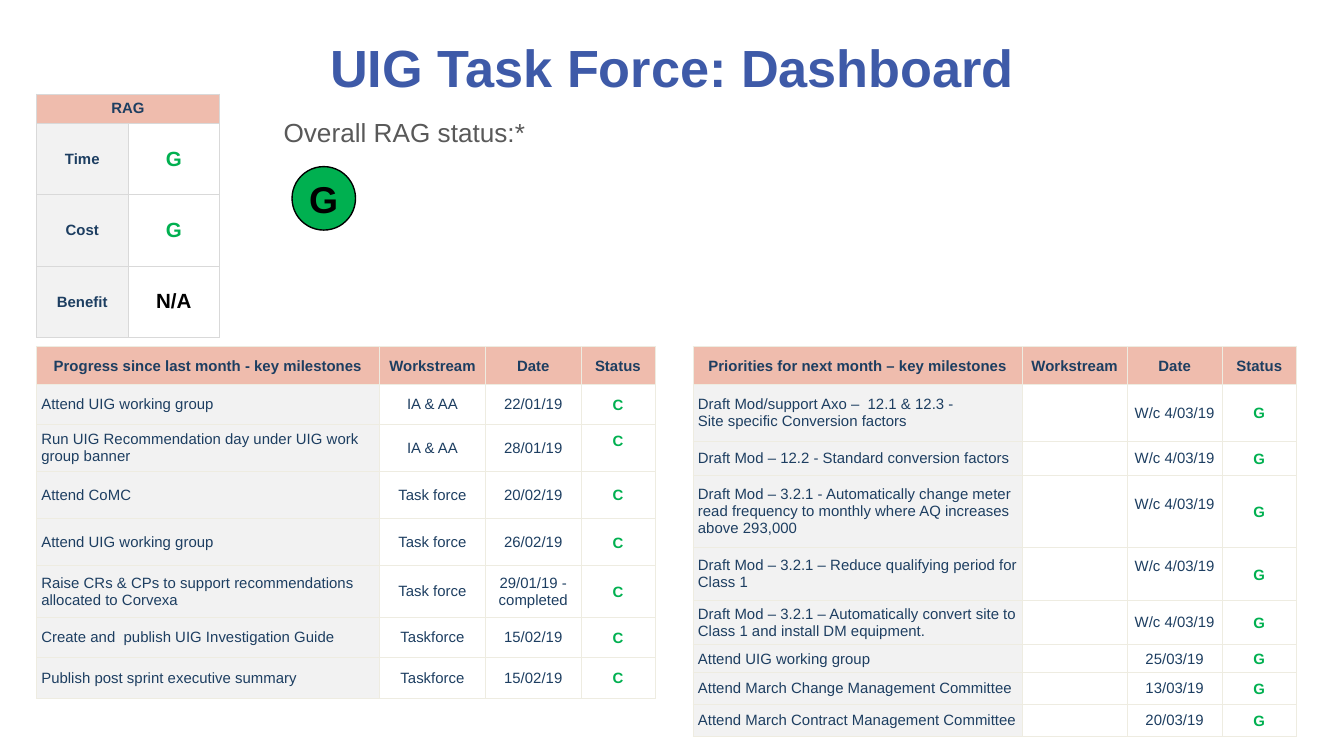
from dataclasses import dataclass

from lxml import etree
from pptx import Presentation
from pptx.dml.color import RGBColor
from pptx.enum import shapes, text
from pptx.oxml import ns
from pptx.util import Cm, Pt

CENTER, LEFT = text.PP_ALIGN.CENTER, text.PP_ALIGN.LEFT
MIDDLE = text.MSO_ANCHOR.MIDDLE


@dataclass(frozen=True)
class Theme:
    font: str = "Arial"
    title: str = "3E5AA8"
    navy: str = "1D3E61"
    grey: str = "595959"
    green: str = "00B050"
    black: str = "000000"
    header: str = "EFBCAD"
    label: str = "F2F2F2"
    white: str = "FFFFFF"
    rag_border: str = "D9D9D9"
    milestone_border: str = "EEECE1"
    title_size: int = 28
    badge_size: int = 20
    heading_size: int = 14
    rag_size: int = 11
    table_size: int = 8


THEME = Theme()

RAG_ROWS = [("Time", "G", THEME.green), ("Cost", "G", THEME.green), ("Benefit", "N/A", THEME.black)]

# Each milestone: row height in cm, description, workstream, date
PROGRESS = [
    (0.75, "Attend UIG working group", "IA & AA", "22/01/19"),
    (0.89, "Run UIG Recommendation day under UIG work group banner", "IA & AA", "28/01/19"),
    (0.89, "Attend CoMC", "Task force", "20/02/19"),
    (0.89, "Attend UIG working group", "Task force", "26/02/19"),
    (0.98, "Raise CRs & CPs to support recommendations allocated to Corvexa", "Task force",
     "29/01/19 - completed"),
    (0.75, "Create and  publish UIG Investigation Guide", "Taskforce", "15/02/19"),
    (0.79, "Publish post sprint executive summary", "Taskforce", "15/02/19"),
]
PRIORITIES = [
    (1.07, "Draft Mod/support Axo –  12.1 & 12.3 -\nSite specific Conversion factors", "",
     "W/c 4/03/19"),
    (0.64, "Draft Mod – 12.2 - Standard conversion factors", "", "W/c 4/03/19"),
    (1.37, "Draft Mod – 3.2.1 - Automatically change meter read frequency to monthly "
     "where AQ increases above 293,000", "", "W/c 4/03/19"),
    (1, "Draft Mod – 3.2.1 – Reduce qualifying period for Class 1", "", "W/c 4/03/19"),
    (0.83, "Draft Mod – 3.2.1 – Automatically convert site to Class 1 and install DM equipment.",
     "", "W/c 4/03/19"),
    (0.53, "Attend UIG working group", "", "25/03/19"),
    (0.59, "Attend March Change Management Committee", "", "13/03/19"),
    (0.61, "Attend March Contract Management Committee", "", "20/03/19"),
]


def rgb(color):
    return RGBColor.from_string(color)


def write(tf, content, size, color, bold=False, align=CENTER):
    tf.text = content
    for p in tf.paragraphs:
        p.alignment = align
        p.font.name = THEME.font
        p.font.size = Pt(size)
        p.font.bold = bold
        p.font.color.rgb = rgb(color)
        if not content:  # an empty cell would otherwise stretch its row
            etree.SubElement(p._p, ns.qn("a:endParaRPr"), sz=str(size * 100))


def add_borders(cell, color):
    tc_pr = cell._tc.get_or_add_tcPr()
    for side in ("lnL", "lnR", "lnT", "lnB"):
        ln = etree.SubElement(tc_pr, ns.qn(f"a:{side}"), w=str(Pt(0.5)))
        fill = etree.SubElement(ln, ns.qn("a:solidFill"))
        etree.SubElement(fill, ns.qn("a:srgbClr"), val=color)


def fill_cell(cell, content, fill, border, color=THEME.navy, size=THEME.table_size,
              bold=False, align=CENTER, tight=False, lift=0):
    """Style one cell; lift (cm) is extra bottom margin that raises its text."""
    cell.margin_left = cell.margin_right = Cm(0.03 if tight else 0.09)
    cell.margin_top = Cm(0.03 if tight else 0.1)
    cell.margin_bottom = Cm((0 if tight else 0.1) + lift)
    cell.vertical_anchor = MIDDLE
    write(cell.text_frame, content, size, color, bold, align)
    add_borders(cell, border)
    cell.fill.solid()
    cell.fill.fore_color.rgb = rgb(fill)


def add_grid(s, left, top, widths, heights):
    table = s.shapes.add_table(len(heights), len(widths), Cm(left), Cm(top),
                               Cm(sum(widths)), Cm(sum(heights))).table
    table.first_row = table.horz_banding = False
    for column, width in zip(table.columns, widths):
        column.width = Cm(width)
    for row, height in zip(table.rows, heights):
        row.height = Cm(height)
    return table


def add_title(s, content):
    title = s.shapes.title
    title.left, title.top, title.width, title.height = Cm(1.27), Cm(0.36), Cm(22.86), Cm(1.78)
    title.text_frame.vertical_anchor = MIDDLE
    write(title.text_frame, content, THEME.title_size, THEME.title, bold=True)


def add_rag_badge(s, status):
    sp = s.shapes.add_shape(shapes.MSO_SHAPE.OVAL, Cm(5.52), Cm(3.15), Cm(1.2), Cm(1.2))
    sp.shadow.inherit = False
    sp.fill.solid()
    sp.fill.fore_color.rgb = rgb(THEME.green)
    sp.line.color.rgb = rgb(THEME.black)
    sp.line.width = Pt(0.75)
    tf = sp.text_frame
    tf.margin_left = tf.margin_right = tf.margin_top = tf.margin_bottom = 0
    tf.word_wrap = False
    tf.vertical_anchor = MIDDLE
    write(tf, status, THEME.badge_size, THEME.black, bold=True)


def add_rag_table(s):
    table = add_grid(s, 0.69, 1.78, [1.73] * 2, [0.55] + [1.35] * 3)
    border = THEME.rag_border
    table.cell(0, 0).merge(table.cell(0, 1))
    for col, heading in enumerate(("RAG", "")):
        fill_cell(table.cell(0, col), heading, THEME.header, border, bold=True)
    for row, (label, status, color) in enumerate(RAG_ROWS, 1):
        fill_cell(table.cell(row, 0), label, THEME.label, border, bold=True)
        fill_cell(table.cell(row, 1), status, THEME.white, border, color,
                  THEME.rag_size, bold=True)


def add_milestones(s, left, widths, heading, milestones, status, lifted):
    """Add a milestone table; lifted holds the (row, column) cells with raised text."""
    table = add_grid(s, left, 6.55, widths, [0.72] + [m[0] for m in milestones])
    border = THEME.milestone_border
    for col, label in enumerate((heading, "Workstream", "Date", "Status")):
        fill_cell(table.cell(0, col), label, THEME.header, border, bold=True, tight=True)
    for row, (_, *values) in enumerate(milestones, 1):
        for col, value in enumerate(values + [status]):
            is_task, is_status = col == 0, col == 3
            fill_cell(table.cell(row, col), value,
                      THEME.label if is_task else THEME.white, border,
                      color=THEME.green if is_status else THEME.navy,
                      bold=is_status, tight=is_status,
                      align=LEFT if is_task else CENTER,
                      lift=0.28 if (row, col) in lifted else 0)


def add_status_heading(s, content):
    box = s.shapes.add_textbox(Cm(5.11), Cm(2.08), Cm(6.4), Cm(0.86))
    box.text_frame.word_wrap = True
    write(box.text_frame, content, THEME.heading_size, THEME.grey, align=LEFT)


def main():
    prs = Presentation()
    prs.slide_width, prs.slide_height = Cm(25.4), Cm(14.29)
    s = prs.slides.add_slide(prs.slide_layouts[5])
    add_title(s, "UIG Task Force: Dashboard")
    add_rag_badge(s, "G")
    add_rag_table(s)
    add_milestones(s, 0.69, [6.48, 2.01, 1.8, 1.4], "Progress since last month - key milestones",
                   PROGRESS, "C", lifted={(2, 3)})
    add_milestones(s, 13.1, [6.22, 1.98, 1.8, 1.4], "Priorities for next month – key milestones",
                   PRIORITIES, "G", lifted={(3, 2), (4, 2)})
    add_status_heading(s, "Overall RAG status:*")
    prs.save("out.pptx")


if __name__ == "__main__":
    main()
